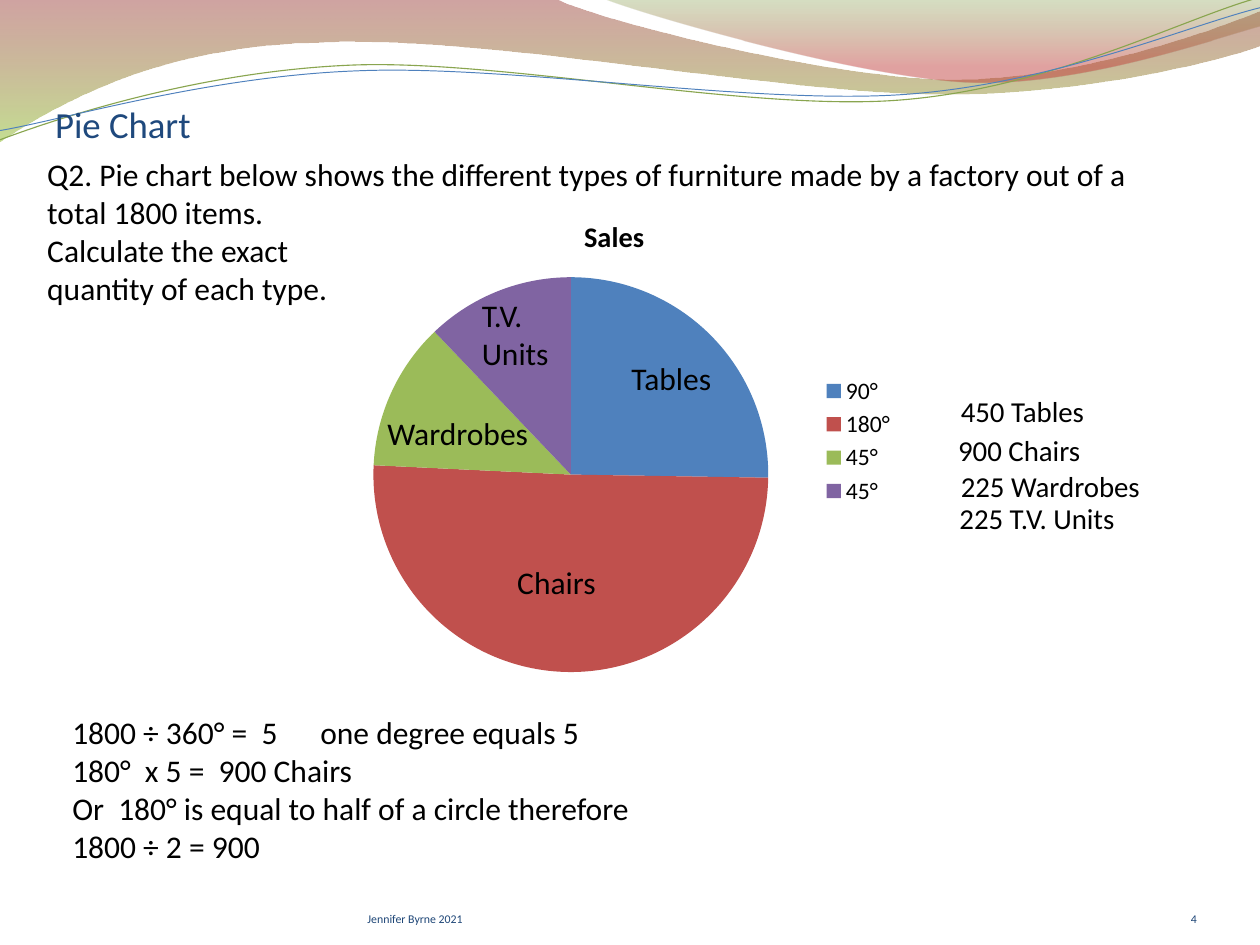
"""Build the pie chart exercise slide about furniture made by a factory."""
from lxml import etree
from pptx import Presentation
from pptx.chart.data import CategoryChartData
from pptx.dml.color import RGBColor
from pptx.enum.chart import XL_CHART_TYPE as ChartType, XL_LEGEND_POSITION as LegendPosition
from pptx.enum.text import MSO_ANCHOR as Anchor, PP_ALIGN as Align
from pptx.oxml.ns import qn
from pptx.util import Pt

FONT = "Calibri"
BLACK = RGBColor(0x00, 0x00, 0x00)
NAVY = RGBColor(0x1F, 0x49, 0x7D)
FOOTER_BLUE = RGBColor(0x1E, 0x46, 0x77)
BLUE = RGBColor(0x4F, 0x81, 0xBD)
RED = RGBColor(0xC0, 0x50, 0x4D)
GREEN = RGBColor(0x9B, 0xBB, 0x59)
PURPLE = RGBColor(0x80, 0x64, 0xA2)
BAND_RED = RGBColor(0x97, 0x33, 0x30)
BAND_LIME = RGBColor(0x95, 0xC2, 0x38)
CORNER_GREEN = RGBColor(0x76, 0x95, 0x37)
CORNER_RED = RGBColor(0xBE, 0x33, 0x30)
LINE_GREEN = RGBColor(0x89, 0xA5, 0x4F)


def draw_path(page, start, steps, close):
    builder = page.shapes.build_freeform(*map(Pt, start))
    builder.add_line_segments([(Pt(step[-2]), Pt(step[-1])) for step in steps], close=close)
    shape = builder.convert_to_shape()
    shape.shadow.inherit = False
    for segment, step in zip(list(shape.element.iter(qn("a:lnTo"))), steps):
        if len(step) == 2:
            continue
        curve = etree.Element(qn("a:cubicBezTo"))
        for x, y in zip(step[::2], step[1::2]):
            etree.SubElement(curve, qn("a:pt"), x=str(Pt(x) - shape.left),
                             y=str(Pt(y) - shape.top))
        segment.getparent().replace(segment, curve)
    return shape


def add_text(page, place, lines, size, color=BLACK, anchor=Anchor.TOP,
             insets=(7.2, 3.6, 7.2, 3.6), wrap=True, align=Align.LEFT):
    box = page.shapes.add_textbox(*map(Pt, place))
    frame = box.text_frame
    frame.word_wrap = wrap
    frame.vertical_anchor = anchor
    (frame.margin_left, frame.margin_top,
     frame.margin_right, frame.margin_bottom) = map(Pt, insets)
    frame.text = "\n".join(lines)
    for para in frame.paragraphs:
        para.alignment = align
        for span in para.runs:
            span.font.name = FONT
            span.font.size = Pt(size)
            span.font.color.rgb = color
    return box


deck = Presentation()
deck.slide_width, deck.slide_height = Pt(960), Pt(720)
page = deck.slides.add_slide(deck.slide_layouts[6])

bands = [
    ((0, -1),
     [(423, -1), (456.5, 16, 637, 60.5, 728, 60.5), (819, 60.5, 920, 24.5, 960, 8.6),
      (961, 34.6), (944, 41.8, 835, 72.7, 716, 72), (597, 72, 366.5, 26.6, 247, 32.4),
      (123, 34, 44, 79, -1, 108.7)],
     [(0, BAND_RED, 45), (1, BAND_LIME, 55)]),
    ((460, -1),
     [(489, 11, 654.5, 59, 738, 62.6), (821.5, 66, 923, 30, 960, 20), (960, 0)],
     [(0, CORNER_GREEN, 30), (0.8, CORNER_RED, 45)]),
]
for start, steps, stops in bands:
    band = draw_path(page, start, steps, close=True)
    band.line.fill.background()
    band.fill.gradient()
    band.fill.gradient_angle = 270
    for stop, (position, color, _) in zip(band.fill.gradient_stops, stops):
        stop.position = position
        stop.color.rgb = color
    for node, (_, _, opacity) in zip(band.element.iter(qn("a:srgbClr")), stops):
        etree.SubElement(node, qn("a:alpha"), val=str(opacity * 1000))

waves = [
    ((-1.9, 83.9),
     [(44.9, 68.9, 151.4, 39.3, 266.2, 39.7), (380, 39.9, 567.3, 89.2, 682.8, 86),
      (799, 82.8, 902.1, 34.3, 959.8, 21.2)], LINE_GREEN, 0.85),
    ((-1.5, 76.8),
     [(44.2, 71.5, 157.3, 43.1, 271.7, 44.2), (387, 44.6, 571.8, 84.4, 687.4, 81.8),
      (802, 79.2, 904.8, 39.9, 961.9, 28.5)], BLUE, 0.75),
]
for start, steps, color, width in waves:
    wave = draw_path(page, start, steps, close=False)
    wave.rotation = 357.3
    wave.fill.background()
    wave.line.color.rgb = color
    wave.line.width = Pt(width)

add_text(page, (36, 49, 858, 213),
         ["Q2. Pie chart below shows the different types of furniture made by a factory"
          " out of a total 1800 items. \vCalculate the exact \vquantity of each type."],
         24, anchor=Anchor.BOTTOM, insets=(0, 3.6, 0, 28.5))

data = CategoryChartData()
data.categories = ["90°", "180°", "45°", "45°"]
data.add_series("Sales", [25, 50, 12, 12])
chart = page.shapes.add_chart(ChartType.PIE, Pt(246), Pt(150), Pt(444), Pt(372), data).chart
chart.font.name = FONT
chart.font.size = Pt(18)
chart.font.color.rgb = BLACK
chart.has_title = True
chart.chart_title.include_in_layout = False
chart.chart_title.text_frame.text = "Sales"
heading = chart.chart_title.text_frame.paragraphs[0].runs[0].font
heading.name, heading.size, heading.bold = FONT, Pt(21.6), True
heading.color.rgb = BLACK
chart.has_legend = True
chart.legend.position = LegendPosition.RIGHT
chart.legend.include_in_layout = False
pie = chart.plots[0]
pie.vary_by_categories = True
for index, color in enumerate([BLUE, RED, GREEN, PURPLE]):
    fill = pie.series[0].points[index].format.fill
    fill.solid()
    fill.fore_color.rgb = color

add_text(page, (280, 667.5, 352, 38), ["Jennifer Byrne 2021"], 9, FOOTER_BLUE,
         Anchor.BOTTOM, (0, 0, 0, 0))

slice_labels = [
    (["Chairs"], 387, 425.5, 75, 36),
    (["Tables"], 474, 270, 76, 36),
    (["Wardrobes"], 288, 312, 123, 36),
    (["T.V.", "Units"], 360, 222, 66, 65.5),
]
for lines, *place in slice_labels:
    add_text(page, place, lines, 24, wrap=False)

working = add_text(page, (48, 540, 834, 152.5),
                   ["1800 ÷ 360° =  5\tone degree equals 5",
                    "180°  x 5 =  900 Chairs",
                    "Or  180° is equal to half of a circle therefore",
                    "1800 ÷ 2 = 900"], 24)
properties = working.text_frame.paragraphs[0]._p.get_or_add_pPr()
tabs = etree.SubElement(properties, qn("a:tabLst"))
etree.SubElement(tabs, qn("a:tab"), pos=str(Pt(189)), algn="l")

add_text(page, (42, 53.5, 864, 58), ["Pie Chart"], 28, NAVY, Anchor.BOTTOM, (0, 3.6, 0, 0))

answers = [
    (" 450 Tables", 720, 296.5, 114.5),
    (" 900 Chairs", 718, 326, 114),
    (" 225 Wardrobes", 720, 353.5, 157.5),
    (" 225 T.V. Units", 719, 378, 139),
]
for answer, left, top, width in answers:
    add_text(page, (left, top, width, 34), [answer], 22, wrap=False)

add_text(page, (832, 667.5, 80, 38), ["4"], 9, FOOTER_BLUE, Anchor.BOTTOM,
         (0, 0, 0, 0), align=Align.RIGHT)

deck.save("out.pptx")
